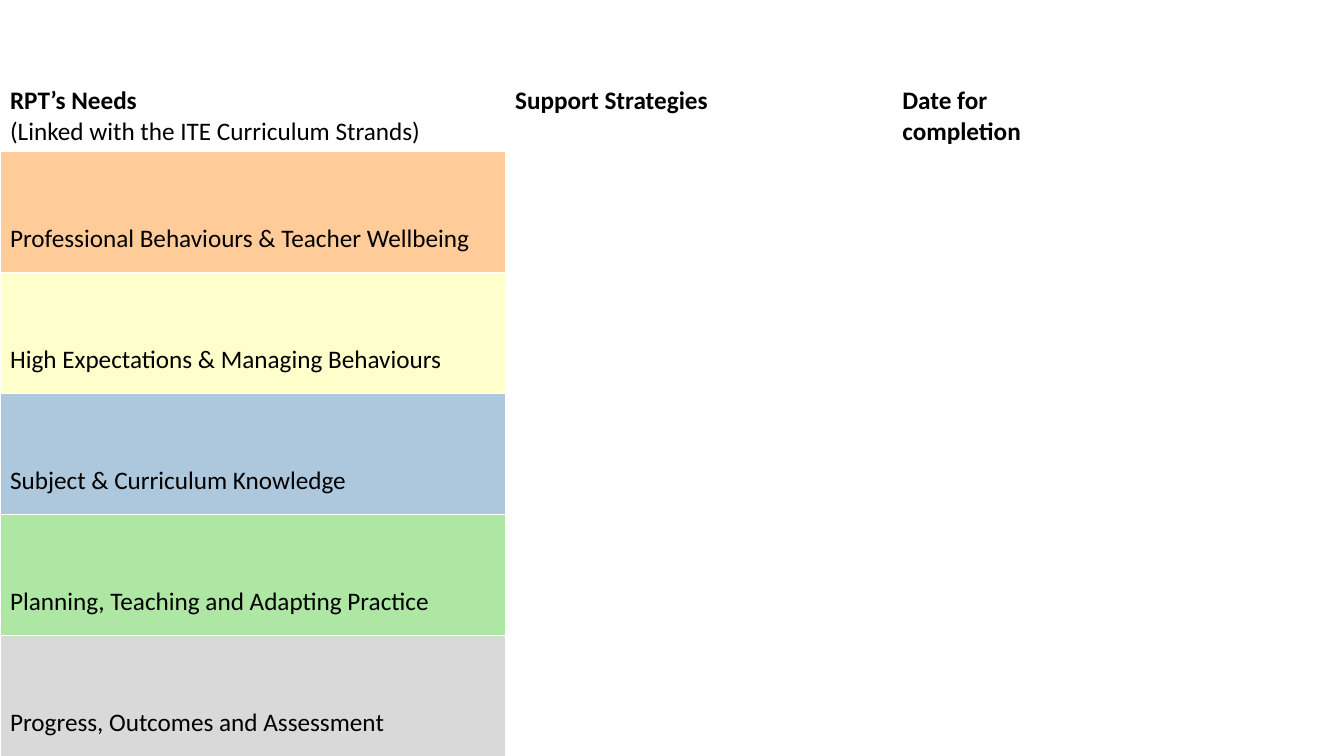
from dataclasses import dataclass

from lxml.etree import SubElement
from pptx import Presentation
from pptx.dml.color import RGBColor
from pptx.oxml.ns import qn
from pptx.slide import Slide
from pptx.table import Table, _Cell
from pptx.util import Inches, Pt


@dataclass(frozen=True)
class Theme:
    font: str = "Calibri"
    size: int = 18
    text: str = "000000"
    border: str = "FFFFFF"
    border_width: float = 0.75
    orange: str = "FFCC99"
    yellow: str = "FFFFCC"
    blue: str = "ADC8DD"
    green: str = "AEE7A3"
    grey: str = "D9D9D9"


@dataclass(frozen=True)
class Line:
    text: str
    bold: bool = False


@dataclass(frozen=True)
class Strand:
    name: str
    fill: str


THEME = Theme()
LEFT, TOP = 0, 0.13
COL_WIDTHS = (5.01, 3.84, 2.38)
HEADER_HEIGHT, STRAND_HEIGHT = 1.37, 1.2
MARGINS = {"margin_left": 0.1, "margin_top": 0.72,
           "margin_right": 0.3, "margin_bottom": 0.04}

HEADERS = (
    (Line("RPT’s Needs", True), Line("(Linked with the ITE Curriculum Strands)")),
    (Line("Support Strategies", True),),
    (Line("Date for completion", True),),
)
STRANDS = (
    Strand("Professional Behaviours & Teacher Wellbeing", THEME.orange),
    Strand("High Expectations & Managing Behaviours", THEME.yellow),
    Strand("Subject & Curriculum Knowledge", THEME.blue),
    Strand("Planning, Teaching and Adapting Practice", THEME.green),
    Strand("Progress, Outcomes and Assessment", THEME.grey),
)


def set_borders(cell: _Cell) -> None:
    tc_pr = cell._tc.get_or_add_tcPr()
    for i, side in enumerate(("lnL", "lnR", "lnT", "lnB")):
        ln = tc_pr.makeelement(qn(f"a:{side}"), {"w": str(Pt(THEME.border_width))})
        fill = SubElement(ln, qn("a:solidFill"))
        SubElement(fill, qn("a:srgbClr"), val=THEME.border)
        tc_pr.insert(i, ln)


def set_fill(cell: _Cell, colour: str | None) -> None:
    """Fill with the colour, or leave the cell clear when there is none."""
    if colour:
        cell.fill.solid()
        cell.fill.fore_color.rgb = RGBColor.from_string(colour)
    else:
        cell.fill.background()


def write_lines(cell: _Cell, lines: tuple[Line, ...]) -> None:
    for name, value in MARGINS.items():
        setattr(cell, name, Inches(value))
    tf = cell.text_frame
    for i, line in enumerate(lines):
        p = tf.paragraphs[0] if i == 0 else tf.add_paragraph()
        r = p.add_run()
        r.text = line.text
        font_format = {"name": THEME.font, "size": Pt(THEME.size), "bold": line.bold}
        for name, value in font_format.items():
            setattr(r.font, name, value)
        r.font.color.rgb = RGBColor.from_string(THEME.text)


def add_support_table(s: Slide) -> Table:
    heights = (HEADER_HEIGHT, *(STRAND_HEIGHT for _ in STRANDS))
    table = s.shapes.add_table(
        len(heights), len(COL_WIDTHS), Inches(LEFT), Inches(TOP),
        Inches(sum(COL_WIDTHS)), Inches(sum(heights))).table
    table.first_row = table.horz_banding = False
    for col, width in zip(table.columns, COL_WIDTHS):
        col.width = Inches(width)
    for row, height in zip(table.rows, heights):
        row.height = Inches(height)
    for cell in table.iter_cells():
        set_fill(cell, None)
        set_borders(cell)
    return table


def main() -> None:
    prs = Presentation()
    prs.slide_width, prs.slide_height = Inches(13.33), Inches(7.5)
    s = prs.slides.add_slide(prs.slide_layouts[6])
    table = add_support_table(s)
    for col, lines in enumerate(HEADERS):
        write_lines(table.cell(0, col), lines)
    for row, strand in enumerate(STRANDS, start=1):
        cell = table.cell(row, 0)
        write_lines(cell, (Line(strand.name),))
        set_fill(cell, strand.fill)
    prs.save("out.pptx")


if __name__ == "__main__":
    main()
